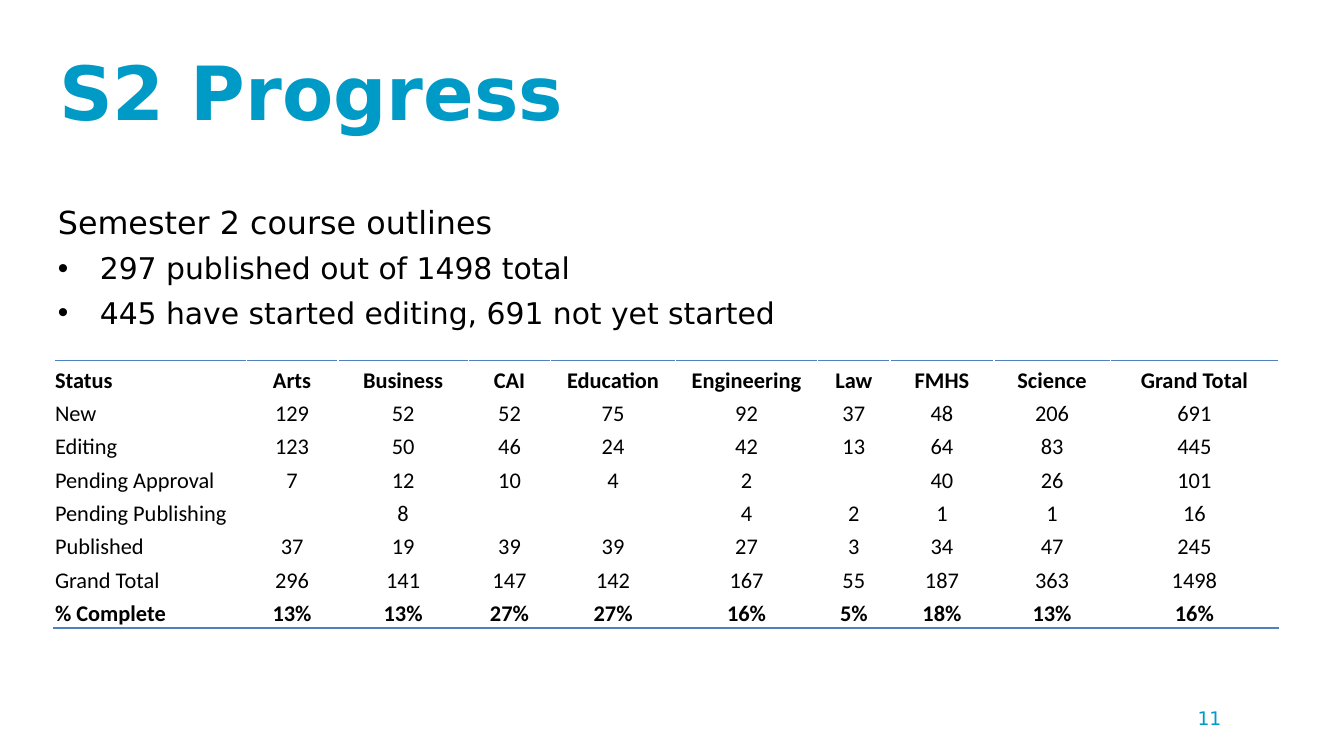
from lxml import etree
from pptx import Presentation
from pptx.dml.color import RGBColor
from pptx.enum import text
from pptx.oxml import ns
from pptx.util import Pt

COLORS = {"title": "009AC7", "text": "000000", "rule": "4F81BD", "cell": "FFFFFF"}


def add_run(p, content, font, size, color, bold=False):
    r = p.add_run()
    r.text = content
    r.font.name = font
    r.font.size = Pt(size)
    r.font.bold = bold
    r.font.color.rgb = RGBColor.from_string(COLORS[color])


def place(sp, left, top, width, height, inset_top=3.6):
    sp.left, sp.top, sp.width, sp.height = Pt(left), Pt(top), Pt(width), Pt(height)
    tf = sp.text_frame
    tf.word_wrap = True
    tf.auto_size = text.MSO_AUTO_SIZE.NONE
    tf.vertical_anchor = text.MSO_ANCHOR.TOP
    tf.margin_left = tf.margin_right = Pt(7.2)
    tf.margin_top, tf.margin_bottom = Pt(inset_top), Pt(3.6)
    return tf


prs = Presentation()
prs.slide_width, prs.slide_height = Pt(720), Pt(405)
s = prs.slides.add_slide(prs.slide_layouts[1])

tf = place(s.shapes.title, 24.5, 18.7, 483, 75, 6)
p = tf.paragraphs[0]
p.alignment = text.PP_ALIGN.LEFT
add_run(p, "S2 Progress", "DejaVu Sans", 40, "title", True)

tf = place(s.placeholders[1], 23.8, 101.5, 661, 260.6)
lines = [
    ("Semester 2 course outlines", 17, False),
    ("297 published out of 1498 total", 16, True),
    ("445 have started editing, 691 not yet started", 16, True),
]
for i, (line, size, bulleted) in enumerate(lines):
    p = tf.add_paragraph() if i else tf.paragraphs[0]
    p.line_spacing = Pt(24)
    p.space_before = p.space_after = Pt(0)
    pPr = p._p.get_or_add_pPr()
    indent = Pt(22.5) if bulleted else 0
    pPr.set("marL", str(indent))
    pPr.set("indent", str(-indent))
    if bulleted:
        etree.SubElement(pPr, ns.qn("a:buFont"), typeface="Arial")
        etree.SubElement(pPr, ns.qn("a:buChar"), char="•")
    else:
        etree.SubElement(pPr, ns.qn("a:buNone"))
    add_run(p, line, "DejaVu Sans", size, "text")

rows = [
    ["Status", "Arts", "Business", "CAI", "Education", "Engineering", "Law", "FMHS", "Science", "Grand Total"],
    ["New", "129", "52", "52", "75", "92", "37", "48", "206", "691"],
    ["Editing", "123", "50", "46", "24", "42", "13", "64", "83", "445"],
    ["Pending Approval", "7", "12", "10", "4", "2", "", "40", "26", "101"],
    ["Pending Publishing", "", "8", "", "", "4", "2", "1", "1", "16"],
    ["Published", "37", "19", "39", "39", "27", "3", "34", "47", "245"],
    ["Grand Total", "296", "141", "147", "142", "167", "55", "187", "363", "1498"],
    ["% Complete", "13%", "13%", "27%", "27%", "16%", "5%", "18%", "13%", "16%"],
]
widths = [103, 49, 70, 44, 67, 76, 39, 55.5, 62.5, 90]
row_height = 17.9
last = len(rows) - 1
rules = {0: "a:lnT", last: "a:lnB"}

table = s.shapes.add_table(
    len(rows), len(widths), Pt(29), Pt(193.2), Pt(sum(widths)), Pt(row_height * len(rows))
).table
table.first_row = table.horz_banding = False
for column, width in zip(table.columns, widths):
    column.width = Pt(width)

for i, row in enumerate(rows):
    table.rows[i].height = Pt(row_height)
    for j, value in enumerate(row):
        cell = table.cell(i, j)
        cell.margin_left = cell.margin_right = cell.margin_top = Pt(0.5)
        cell.margin_bottom = Pt(0)
        cell.vertical_anchor = text.MSO_ANCHOR.BOTTOM
        cell.fill.solid()
        cell.fill.fore_color.rgb = RGBColor.from_string(COLORS["cell"])
        p = cell.text_frame.paragraphs[0]
        p.alignment = text.PP_ALIGN.CENTER if j else text.PP_ALIGN.LEFT
        if value:
            add_run(p, value, "Calibri", 12, "text", i in rules)
        else:
            etree.SubElement(p._p, ns.qn("a:endParaRPr"), sz="1200")
        if i in rules:
            ln = etree.Element(ns.qn(rules[i]), w=str(Pt(1)))
            fill = etree.SubElement(ln, ns.qn("a:solidFill"))
            etree.SubElement(fill, ns.qn("a:srgbClr"), val=COLORS["rule"])
            cell._tc.get_or_add_tcPr().insert(0, ln)

sp = s.shapes.add_textbox(0, 0, 0, 0)
tf = place(sp, 634.5, 375.1, 50.4, 28)
add_run(tf.paragraphs[0], "11", "DejaVu Sans", 10, "title")

prs.save("out.pptx")
